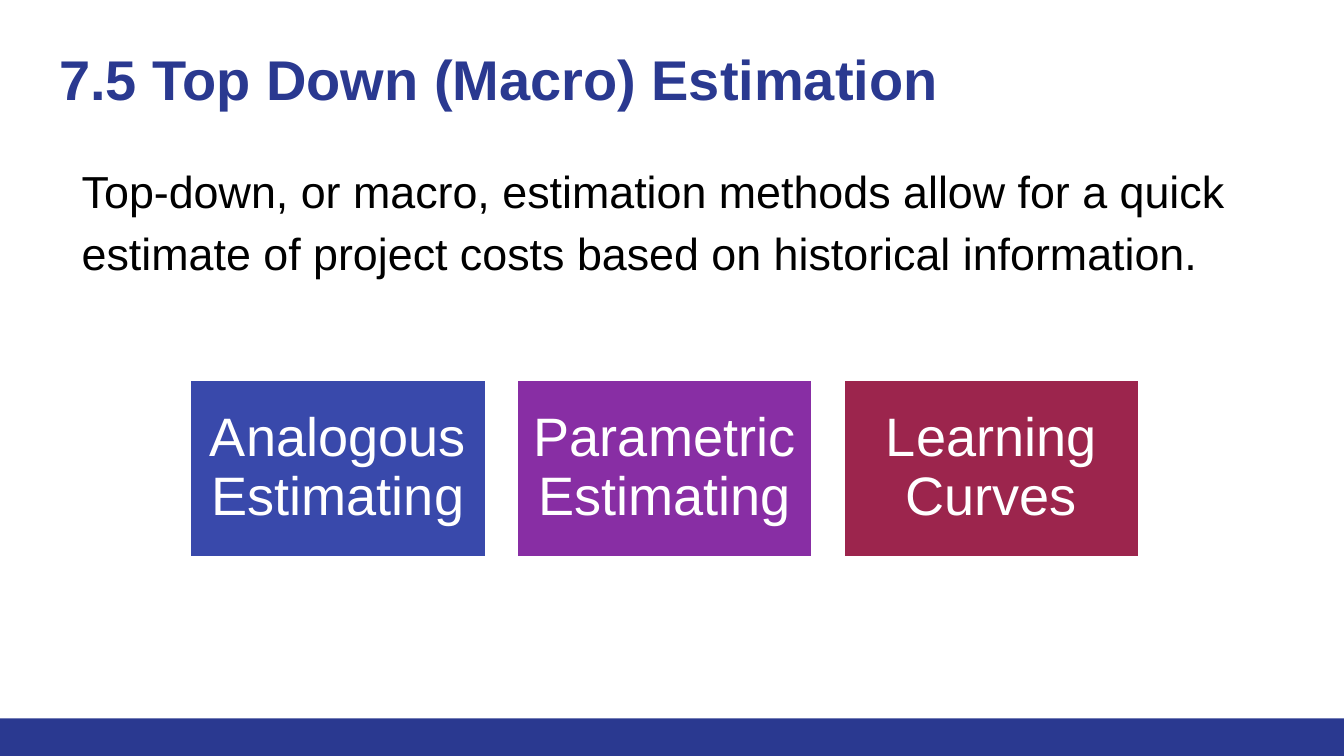
from pptx import Presentation
from pptx.dml.color import RGBColor
from pptx.enum.shapes import MSO_SHAPE
from pptx.enum.text import MSO_ANCHOR, MSO_AUTO_SIZE, PP_ALIGN
from pptx.util import Inches, Pt

RECT = MSO_SHAPE.RECTANGLE
TOP, MIDDLE = MSO_ANCHOR.TOP, MSO_ANCHOR.MIDDLE
LEFT, CENTER = PP_ALIGN.LEFT, PP_ALIGN.CENTER

NAVY = RGBColor(0x2A, 0x39, 0x90)
BLUE = RGBColor(0x39, 0x49, 0xAB)
PURPLE = RGBColor(0x88, 0x2E, 0xA4)
CRIMSON = RGBColor(0x9C, 0x25, 0x4D)
WHITE = RGBColor(0xFF, 0xFF, 0xFF)
BLACK = RGBColor(0, 0, 0)

TITLE = "7.5 Top Down (Macro) Estimation"
INTRO = ("Top-down, or macro, estimation methods allow for a quick "
         "estimate of project costs based on historical information.")
METHODS = [
    ("Analogous Estimating", BLUE),
    ("Parametric Estimating", PURPLE),
    ("Learning Curves", CRIMSON),
]

SLIDE_W = 10
SLIDE_H = SLIDE_W * 9 / 16
FOOTER_H = 0.28
CARD_LEFT, CARD_TOP = 1.41, 2.82
CARD_W, CARD_H = 2.21, 1.33
CARD_STEP = CARD_W * 1.1


def box(left, top, width, height):
    return [Inches(v) for v in (left, top, width, height)]


def write(s, text, size, color, inset=0.1, anchor=TOP, align=LEFT, bold=False):
    """Fill a shape with one formatted paragraph and return the paragraph."""
    tf = s.text_frame
    tf.word_wrap = True
    tf.auto_size = MSO_AUTO_SIZE.NONE
    tf.vertical_anchor = anchor
    tf.margin_left = tf.margin_right = Inches(inset)
    tf.margin_top = tf.margin_bottom = Inches(inset)
    p = tf.paragraphs[0]
    p.alignment = align
    r = p.add_run()
    r.text = text
    r.font.name = "Arial"
    r.font.size = Pt(size)
    r.font.bold = bold
    r.font.color.rgb = color
    return p


def add_rect(slide, bounds, color):
    s = slide.shapes.add_shape(RECT, *bounds)
    s.shadow.inherit = False
    s.fill.solid()
    s.fill.fore_color.rgb = color
    s.line.fill.background()
    return s


prs = Presentation()
prs.slide_width, prs.slide_height = Inches(SLIDE_W), Inches(SLIDE_H)
slide = prs.slides.add_slide(prs.slide_layouts[5])

add_rect(slide, box(0, SLIDE_H - FOOTER_H, SLIDE_W, FOOTER_H), NAVY)

title = slide.shapes.title
title.left, title.top, title.width, title.height = box(0.34, 0.23, 9.32, 0.66)
write(title, TITLE, 30, NAVY, bold=True)

intro = slide.shapes.add_textbox(*box(0.51, 1.06, 8.86, 1.31))
p = write(intro, INTRO, 24, BLACK)
p.line_spacing = 1.15

for i, (method, color) in enumerate(METHODS):
    card = add_rect(slide, box(CARD_LEFT + i * CARD_STEP, CARD_TOP, CARD_W, CARD_H), color)
    card.line.color.rgb = WHITE
    card.line.width = Pt(2)
    p = write(card, method, 29, WHITE, inset=0.12, anchor=MIDDLE, align=CENTER)
    p.line_spacing = 0.9

prs.save("out.pptx")
